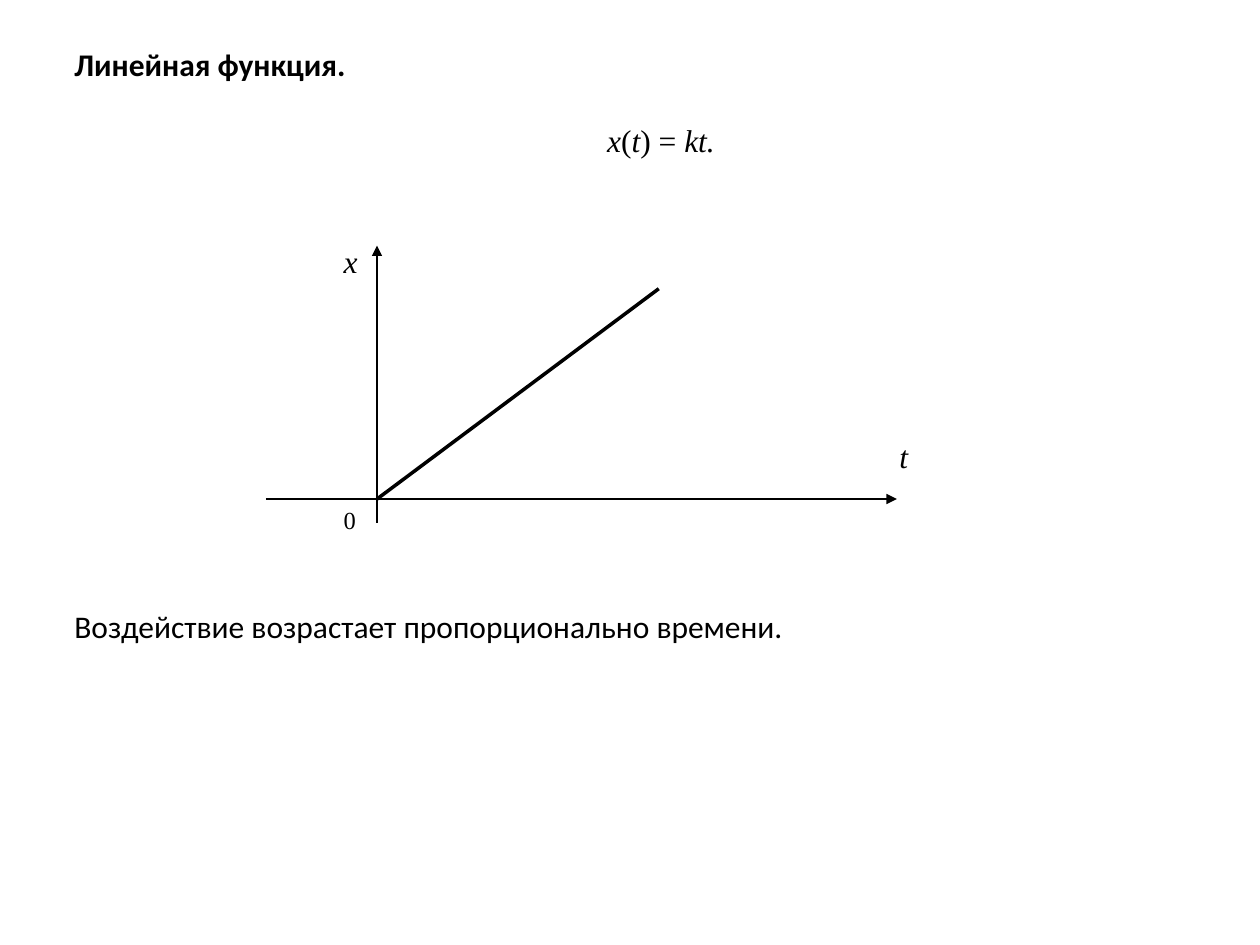
import pptx
import pptx.dml.color
import pptx.enum.shapes
import pptx.enum.text
import pptx.oxml.ns
import pptx.util
from lxml import etree
from pptx.util import Cm

BLACK = "000000"
SERIF = "Times New Roman"
INDENT = Cm(1.25)
ORIGIN_X, ORIGIN_Y = 7.6, 10.06


def color(hex_string):
    return pptx.dml.color.RGBColor.from_string(hex_string)


def add_text(shapes, text, x, y, w, h, *, font="Calibri", size=18, bold=False,
             italic="", indent=0, after=0, wrap=True, centered=False):
    """Add a text box; the letters listed in italic are set in italics."""
    sp = shapes.add_textbox(Cm(x), Cm(y), Cm(w), Cm(h))
    tf = sp.text_frame
    tf.word_wrap = wrap
    tf.auto_size = pptx.enum.text.MSO_AUTO_SIZE.SHAPE_TO_FIT_TEXT
    p = tf.paragraphs[0]
    p.space_after = pptx.util.Pt(after)
    if indent:
        p._p.get_or_add_pPr().set("indent", str(int(indent)))
    if centered:
        p.alignment = pptx.enum.text.PP_ALIGN.CENTER
        tf.vertical_anchor = pptx.enum.text.MSO_ANCHOR.MIDDLE
    for part, slanted in split_italic(text, italic):
        r = p.add_run()
        r.text = part
        r.font.name = font
        r.font.size = pptx.util.Pt(size)
        r.font.bold = bold
        r.font.italic = slanted
        r.font.color.rgb = color(BLACK)
    return sp


def split_italic(text, italic):
    """Split text into [part, is_italic] pairs."""
    parts = []
    for char in text:
        slanted = char in italic
        if parts and parts[-1][1] == slanted:
            parts[-1][0] += char
        else:
            parts.append([char, slanted])
    return parts


def add_line(shapes, x1, y1, x2, y2, width=0.75, arrow=False):
    s = shapes.add_connector(pptx.enum.shapes.MSO_CONNECTOR.STRAIGHT,
                             Cm(x1), Cm(y1), Cm(x2), Cm(y2))
    s.line.color.rgb = color(BLACK)
    s.line.width = pptx.util.Pt(width)
    if arrow:
        ln = s.line._get_or_add_ln()
        etree.SubElement(ln, pptx.oxml.ns.qn("a:tailEnd"), type="triangle")
    etree.SubElement(s._element.spPr, pptx.oxml.ns.qn("a:effectLst"))
    return s


def add_graph(slide):
    shapes = slide.shapes.add_group_shape().shapes
    add_line(shapes, ORIGIN_X, 10.54, ORIGIN_X, 4.95, arrow=True)
    add_line(shapes, 5.36, ORIGIN_Y, 18.08, ORIGIN_Y, arrow=True)
    add_line(shapes, ORIGIN_X, ORIGIN_Y, 13.28, 5.82, width=2)
    for text, x, y, h, size in (("x", 6.68, 4.75, 1.3, 18),
                                ("t", 17.88, 8.69, 1.3, 18),
                                ("0", 6.68, ORIGIN_Y, 1.04, 14)):
        add_text(shapes, text, x, y, 1.37, h, font=SERIF, size=size,
                 italic="xt", after=10)


def main():
    prs = pptx.Presentation()
    prs.slide_width, prs.slide_height = Cm(25.4), Cm(19.05)
    slide = prs.slides.add_slide(prs.slide_layouts[6])
    add_text(slide.shapes, "Линейная функция.", 0, 0.79, 25.4, 1.02,
             bold=True, indent=INDENT)
    add_text(slide.shapes, "x(t) = kt.", 10.72, 2.31, 3.96, 1.02, font=SERIF,
             italic="xkt.", indent=INDENT, wrap=False, centered=True)
    add_graph(slide)
    add_text(slide.shapes, "Воздействие возрастает пропорционально времени.",
             0, 12.12, 25.4, 1.02, indent=INDENT)
    prs.save("out.pptx")


if __name__ == "__main__":
    main()
